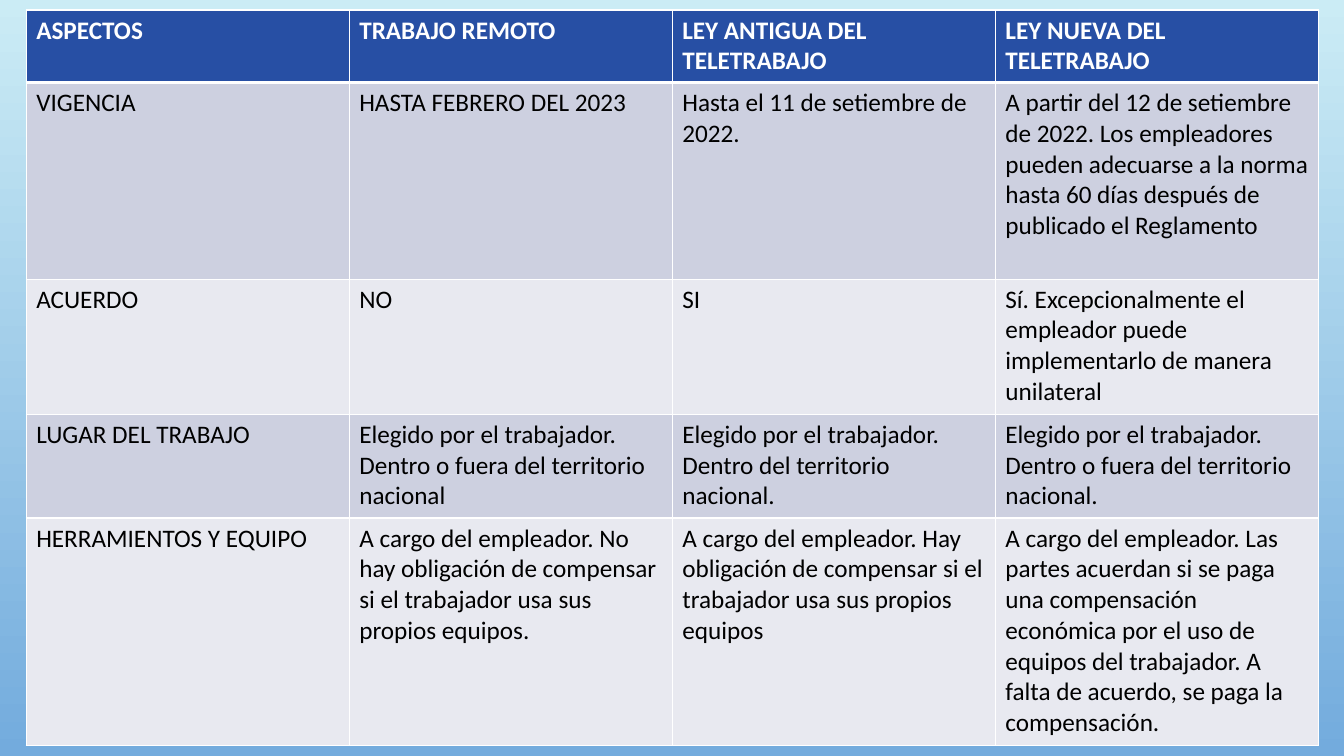
"""Build a slide with a table comparing remote work and telework laws."""
import dataclasses

import lxml.etree
import pptx
import pptx.dml.color
import pptx.oxml.ns
import pptx.table
import pptx.util

Pt = pptx.util.Pt
RGBColor = pptx.dml.color.RGBColor

WHITE = RGBColor(0xFF, 0xFF, 0xFF)
BLACK = RGBColor(0x00, 0x00, 0x00)
BLUE = RGBColor(0x27, 0x4F, 0xA4)
DARK = RGBColor(0xCD, 0xD0, 0xE0)
LIGHT = RGBColor(0xE8, 0xE9, 0xF0)
SKY = RGBColor(0xCB, 0xEC, 0xF5)
SEA = RGBColor(0x73, 0xAB, 0xDD)

LEFT, TOP, WIDTH = 18.72, 7.2, 923.04
THIN, THICK = 1, 3


@dataclasses.dataclass(frozen=True)
class Row:
    height: float
    texts: tuple[str, ...]


ROWS = (
    Row(51.84, (
        "ASPECTOS",
        "TRABAJO REMOTO",
        "LEY ANTIGUA DEL TELETRABAJO",
        "LEY NUEVA DEL TELETRABAJO",
    )),
    Row(140.4, (
        "VIGENCIA",
        "HASTA FEBRERO DEL 2023",
        "Hasta el 11 de setiembre de 2022.",
        "A partir del 12 de setiembre de 2022. Los empleadores pueden adecuarse "
        "a la norma hasta 60 días después de publicado el Reglamento",
    )),
    Row(96.48, (
        "ACUERDO",
        "NO",
        "SI",
        "Sí. Excepcionalmente el empleador puede implementarlo de manera unilateral",
    )),
    Row(74.16, (
        "LUGAR DEL TRABAJO",
        "Elegido por el trabajador. Dentro o fuera del territorio nacional",
        "Elegido por el trabajador. Dentro del territorio nacional.",
        "Elegido por el trabajador. Dentro o fuera del territorio nacional.",
    )),
    Row(162.72, (
        "HERRAMIENTOS Y EQUIPO",
        "A cargo del empleador. No hay obligación de compensar si el trabajador "
        "usa sus propios equipos.",
        "A cargo del empleador. Hay obligación de compensar si el trabajador "
        "usa sus propios equipos",
        "A cargo del empleador. Las partes acuerdan si se paga una compensación "
        "económica por el uso de equipos del trabajador. A falta de acuerdo, "
        "se paga la compensación.",
    )),
)


def add_edge(cell: pptx.table._Cell, side: str, width: float) -> None:
    """Draw one white border of a cell."""
    qn = pptx.oxml.ns.qn
    props = cell._tc.get_or_add_tcPr()
    line = lxml.etree.SubElement(props, qn(f"a:ln{side}"), w=str(Pt(width)))
    fill = lxml.etree.SubElement(line, qn("a:solidFill"))
    lxml.etree.SubElement(fill, qn("a:srgbClr"), val=str(WHITE))


def draw_cell(cell: pptx.table._Cell, text: str, index: int) -> None:
    """Fill and format one cell of the row with the given index."""
    head = index == 0
    edges = {
        "L": THIN,
        "R": THIN,
        "T": THICK if index == 1 else THIN,
        "B": THICK if head else THIN,
    }
    for side, width in edges.items():
        add_edge(cell, side, width)
    cell.fill.solid()
    cell.fill.fore_color.rgb = BLUE if head else DARK if index % 2 else LIGHT
    cell.text_frame.text = text
    font = cell.text_frame.paragraphs[0].runs[0].font
    font.name = "Calibri"
    font.size = Pt(18)
    font.bold = head
    font.color.rgb = WHITE if head else BLACK


def main() -> None:
    """Create the slide and save it."""
    deck = pptx.Presentation()
    deck.slide_width, deck.slide_height = Pt(960), Pt(540)
    slide = deck.slides.add_slide(deck.slide_layouts[6])

    back = slide.background.fill
    back.gradient()
    back.gradient_angle = 270
    for stop, color in zip(back.gradient_stops, (SKY, SEA)):
        stop.color.rgb = color

    cols = len(ROWS[0].texts)
    height = sum(row.height for row in ROWS)
    frame = slide.shapes.add_table(
        len(ROWS), cols, Pt(LEFT), Pt(TOP), Pt(WIDTH), Pt(height))
    table = frame.table
    for index, row in enumerate(ROWS):
        table.rows[index].height = Pt(row.height)
        for col, text in enumerate(row.texts):
            draw_cell(table.cell(index, col), text, index)

    deck.save("out.pptx")


if __name__ == "__main__":
    main()
